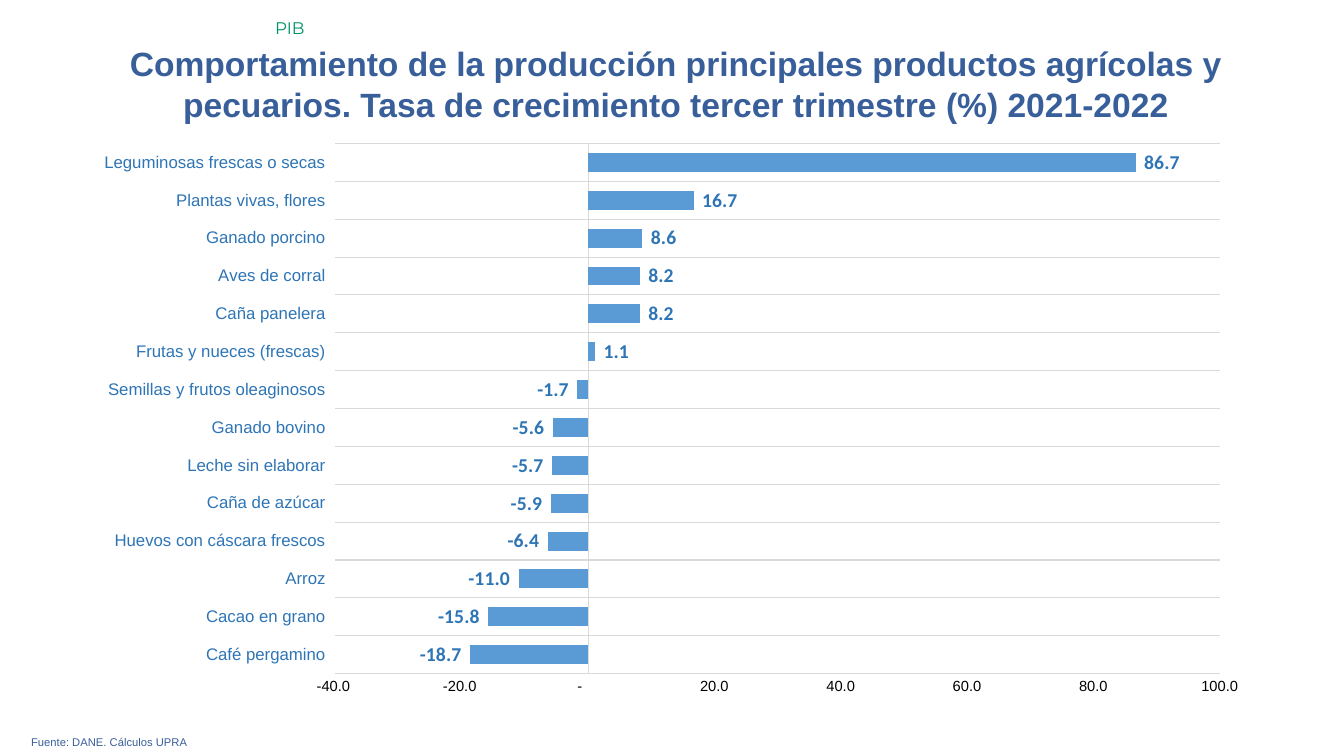
from lxml import etree
from pptx import Presentation
from pptx.chart.data import CategoryChartData
from pptx.dml.color import RGBColor
from pptx.enum.chart import XL_CHART_TYPE, XL_LABEL_POSITION, XL_TICK_LABEL_POSITION, XL_TICK_MARK
from pptx.enum.text import MSO_AUTO_SIZE, PP_ALIGN
from pptx.oxml.ns import qn
from pptx.util import Pt

COLORS = {
    "title": "395F9B",
    "section": "009267",
    "bar": "5B9BD5",
    "label": "2E75B6",
    "grid": "D9D9D9",
    "axis": "000000",
}
NUMBER_FORMAT = '_-* #,##0.0_-;\\-* #,##0.0_-;_-* "-"??_-;'


def style_font(font, name, size, color, bold=False):
    font.name = name
    font.size = Pt(size)
    font.bold = bold
    font.color.rgb = RGBColor.from_string(COLORS[color])


presentation = Presentation()
presentation.slide_width = Pt(960)
presentation.slide_height = Pt(540)
slide = presentation.slides.add_slide(presentation.slide_layouts[6])

# Title, source note and section name
texts = [
    ("Comportamiento de la producción principales productos agrícolas y pecuarios. "
     "Tasa de crecimiento tercer trimestre (%) 2021-2022",
     (32.4, 27.4, 900.7, 65.5), PP_ALIGN.CENTER, ("Arial", 24, "title", True)),
    ("Fuente: DANE. Cálculos UPRA",
     (15.1, 522, 929.5, 17.3), PP_ALIGN.JUSTIFY, ("Arial", 8, "title")),
    ("PIB", (189.4, 9.4, 770.4, 21.6), PP_ALIGN.LEFT, ("Montserrat", 12, "section")),
]
for text, box, alignment, font_style in texts:
    text_frame = slide.shapes.add_textbox(*map(Pt, box)).text_frame
    text_frame.word_wrap = True
    text_frame.auto_size = MSO_AUTO_SIZE.SHAPE_TO_FIT_TEXT
    text_frame.text = text
    paragraph = text_frame.paragraphs[0]
    paragraph.alignment = alignment
    style_font(paragraph.runs[0].font, *font_style)

# Growth rate by product, from the bottom bar up
growth = {
    "Café pergamino": -18.7,
    "Cacao en grano": -15.8,
    "Arroz": -11.0,
    "Huevos con cáscara frescos": -6.4,
    "Caña de azúcar": -5.9,
    "Leche sin elaborar": -5.7,
    "Ganado bovino": -5.6,
    "Semillas y frutos oleaginosos": -1.7,
    "Frutas y nueces (frescas)": 1.1,
    "Caña panelera": 8.2,
    "Aves de corral": 8.2,
    "Ganado porcino": 8.6,
    "Plantas vivas, flores": 16.7,
    "Leguminosas frescas o secas": 86.7,
}
chart_data = CategoryChartData()
chart_data.categories = list(growth)
chart_data.add_series("Series 1", list(growth.values()))
chart = slide.shapes.add_chart(
    XL_CHART_TYPE.BAR_CLUSTERED, Pt(57.6), Pt(94.3), Pt(846.7), Pt(409), chart_data
).chart
chart.has_legend = False
chart.has_title = False
style_font(chart.font, "Arial", 10.5, "axis")

# Bars and data labels
plot = chart.plots[0]
plot.gap_width = 100
plot.vary_by_categories = False
series = plot.series[0]
series.invert_if_negative = False
series.format.fill.solid()
series.format.fill.fore_color.rgb = RGBColor.from_string(COLORS["bar"])
labels = series.data_labels
labels.show_value = True
labels.position = XL_LABEL_POSITION.OUTSIDE_END
labels.number_format = NUMBER_FORMAT
labels.number_format_is_linked = False
style_font(labels.font, "Calibri", 14, "label", True)

# Axes
category_axis = chart.category_axis
category_axis.tick_label_position = XL_TICK_LABEL_POSITION.LOW
category_axis.has_major_gridlines = True
for line in (category_axis.format.line, category_axis.major_gridlines.format.line):
    line.color.rgb = RGBColor.from_string(COLORS["grid"])
    line.width = Pt(0.75)
style_font(category_axis.tick_labels.font, "Arial", 12, "label")

value_axis = chart.value_axis
value_axis.has_major_gridlines = False
value_axis.minimum_scale = -40
value_axis.maximum_scale = 100
value_axis.major_unit = 20
value_axis.format.line.fill.background()
value_axis.tick_labels.number_format = NUMBER_FORMAT
value_axis.tick_labels.number_format_is_linked = False
style_font(value_axis.tick_labels.font, "Arial", 10.5, "axis")
for axis in (category_axis, value_axis):
    axis.major_tick_mark = XL_TICK_MARK.NONE
    axis.minor_tick_mark = XL_TICK_MARK.NONE

# Fixed inner plot area, as fractions of the chart
plot_area = chart.element.find(f".//{qn('c:plotArea')}")
layout = plot_area.find(qn("c:layout"))
if layout is None:
    layout = etree.Element(qn("c:layout"))
    plot_area.insert(0, layout)
manual_layout = etree.SubElement(layout, qn("c:manualLayout"))
for tag, value in [("layoutTarget", "inner"), ("xMode", "edge"), ("yMode", "edge"),
                   ("x", "0.215"), ("y", "0.02"), ("w", "0.746"), ("h", "0.926")]:
    etree.SubElement(manual_layout, qn(f"c:{tag}")).set("val", value)

presentation.save("out.pptx")
